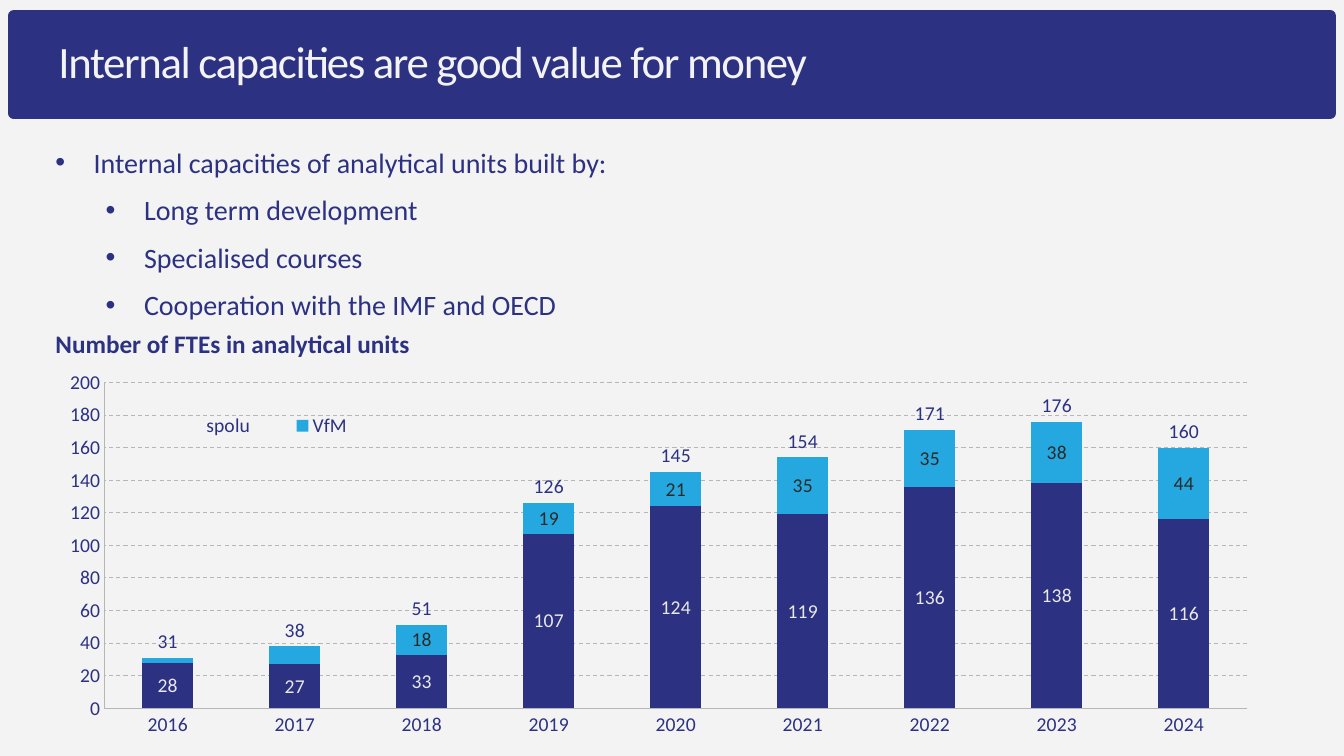
from dataclasses import dataclass

from lxml import etree
from pptx import Presentation
from pptx.chart.data import CategoryChartData
from pptx.dml.color import RGBColor
from pptx.enum.chart import XL_CHART_TYPE, XL_LABEL_POSITION, XL_LEGEND_POSITION, XL_TICK_MARK
from pptx.enum.dml import MSO_LINE
from pptx.enum.shapes import MSO_SHAPE
from pptx.enum.text import MSO_ANCHOR
from pptx.oxml import parse_xml
from pptx.oxml.ns import nsdecls, qn
from pptx.util import Inches, Pt

NAVY = RGBColor(0x2C, 0x31, 0x82)
SKY = RGBColor(0x25, 0xA8, 0xE0)
PALE = RGBColor(0xF3, 0xF3, 0xF3)
LIGHT = RGBColor(0xE9, 0xE9, 0xE9)
DARK = RGBColor(0x2A, 0x2A, 0x2A)
GREY = RGBColor(0xB6, 0xB6, 0xB6)
FONT = "Calibri"
NO_GRID = "{2D5ABB26-0587-4C30-8999-92F81FD0307C}"


@dataclass
class Bullet:
    text: str
    level: int = 0


@dataclass
class Series:
    name: str
    values: list[int]
    ink: RGBColor
    fill: RGBColor | None = None
    place: XL_LABEL_POSITION | None = None
    bare: tuple[int, ...] = ()


BULLETS = [
    Bullet("Internal capacities of analytical units built by:"),
    Bullet("Long term development", 1),
    Bullet("Specialised courses", 1),
    Bullet("Cooperation with the IMF and OECD", 1),
]
YEARS = [str(year) for year in range(2016, 2025)]
CORE = [28, 27, 33, 107, 124, 119, 136, 138, 116]
VFM = [3, 11, 18, 19, 21, 35, 35, 38, 44]
TOTAL = [31, 38, 51, 126, 145, 154, 171, 176, 160]
SERIES = [
    Series("Series 1", CORE, LIGHT, NAVY),
    Series("VfM", VFM, DARK, SKY, bare=(0, 1)),
    Series("spolu", TOTAL, NAVY, place=XL_LABEL_POSITION.INSIDE_BASE),
]


def style(font, size: float, color: RGBColor = NAVY, bold: bool = False) -> None:
    font.name, font.size, font.bold = FONT, Pt(size), bold
    font.color.rgb = color


def write(para, text: str, *, size: float, color: RGBColor = NAVY,
          bold: bool = False, track: float = 0) -> None:
    run = para.add_run()
    run.text = text
    style(run.font, size, color, bold)
    if track:
        run._r.get_or_add_rPr().set("spc", str(int(track * 100)))


def add_box(slide, left: float, top: float, width: float, height: float):
    box = slide.shapes.add_textbox(Inches(left), Inches(top), Inches(width), Inches(height))
    box.text_frame.word_wrap = True
    return box.text_frame


def add_title(slide) -> None:
    band = slide.shapes.add_shape(MSO_SHAPE.ROUNDED_RECTANGLE, Inches(0.08), Inches(0.1),
                                  Inches(13.17), Inches(1.08))
    band.adjustments[0] = 0.05
    band.shadow.inherit = False
    band.fill.solid()
    band.fill.fore_color.rgb = NAVY
    band.line.fill.background()
    frame = add_box(slide, 0.38, 0.11, 11.87, 1.06)
    frame.vertical_anchor = MSO_ANCHOR.MIDDLE
    frame.margin_left, frame.margin_right = Inches(0.2), Inches(0.05)
    para = frame.paragraphs[0]
    para.line_spacing = 0.9
    write(para, "Internal capacities are good value for money", size=32, color=PALE, track=-1)


def add_list(slide) -> None:
    frame = add_box(slide, 0.45, 1.39, 12.29, 2.62)
    for i, item in enumerate(BULLETS):
        para = frame.add_paragraph() if i else frame.paragraphs[0]
        para.level = item.level
        props = para._p.get_or_add_pPr()
        props.set("marL", str(Inches(0.38 + 0.5 * item.level)))
        props.set("indent", str(Inches(-0.38)))
        etree.SubElement(props, qn("a:buFont")).set("typeface", "Arial")
        etree.SubElement(props, qn("a:buChar")).set("char", "•")
        if i:
            para.space_before = Pt(10)
        write(para, item.text, size=20)


def add_frame(slide) -> None:
    """Table that heads the chart."""
    shape = slide.shapes.add_table(2, 1, Inches(0.45), Inches(3.22), Inches(12.44), Inches(3.82))
    for node in shape.element.iter(qn("a:tableStyleId")):
        node.text = NO_GRID
    table = shape.table
    table.first_row = table.horz_banding = False
    for row, height in zip(table.rows, (0.44, 3.38)):
        row.height = Inches(height)
        row.cells[0].fill.background()
    head = table.cell(0, 0).text_frame.paragraphs[0]
    write(head, "Number of FTEs in analytical units", size=18, bold=True)


def layout(x: float, y: float, width: float, height: float, inner: bool = False):
    """Manual layout in shares of the chart's size."""
    target = '<c:layoutTarget val="inner"/>' if inner else ""
    sizes = zip("xywh", (x, y, width, height))
    parts = "".join(f'<c:{key} val="{share}"/>' for key, share in sizes)
    return parse_xml(f'<c:layout {nsdecls("c")}><c:manualLayout>{target}'
                     '<c:xMode val="edge"/><c:yMode val="edge"/>'
                     f'{parts}</c:manualLayout></c:layout>')


def set_axis(axis) -> None:
    axis.major_tick_mark = axis.minor_tick_mark = XL_TICK_MARK.NONE
    style(axis.tick_labels.font, 14)
    axis.format.line.color.rgb = GREY
    axis.format.line.width = Pt(0.75)


def set_series(series, item: Series) -> None:
    fill = series.format.fill
    if item.fill is None:
        fill.background()
    else:
        fill.solid()
        fill.fore_color.rgb = item.fill
    series.invert_if_negative = False
    labels = series.data_labels
    labels.show_value = True
    style(labels.font, 14, item.ink)
    if item.place is not None:
        labels.position = item.place
    for i, point in enumerate(item.bare):
        labels._element.insert(i, parse_xml(
            f'<c:dLbl {nsdecls("c")}><c:idx val="{point}"/><c:delete val="1"/></c:dLbl>'))


def place_parts(chart) -> None:
    """Fix the plot and legend places, hide one entry and fill the chart."""
    space = chart._chartSpace
    for old in space.xpath("./c:chart/c:plotArea/c:layout | ./c:chart/c:legend/c:layout"):
        old.getparent().remove(old)
    body = space.find(qn("c:chart"))
    body.find(qn("c:plotArea")).insert(0, layout(0.053, 0.05, 0.918, 0.829, inner=True))
    cover = body.find(qn("c:legend")).find(qn("c:overlay"))
    cover.addprevious(parse_xml(
        f'<c:legendEntry {nsdecls("c")}><c:idx val="0"/><c:delete val="1"/></c:legendEntry>'))
    cover.addprevious(layout(0.09, 0.11, 0.19, 0.1))
    body.addnext(parse_xml(
        f'<c:spPr {nsdecls("c", "a")}><a:solidFill><a:srgbClr val="{PALE}"/></a:solidFill>'
        '<a:ln><a:noFill/></a:ln></c:spPr>'))


def add_graph(slide) -> None:
    data = CategoryChartData()
    data.categories = YEARS
    for item in SERIES:
        data.add_series(item.name, item.values)
    chart = slide.shapes.add_chart(XL_CHART_TYPE.COLUMN_STACKED, Inches(0.38), Inches(3.6),
                                   Inches(12.35), Inches(3.9), data).chart
    style(chart.font, 14)
    chart.has_title = False
    plot = chart.plots[0]
    plot.gap_width, plot.overlap, plot.vary_by_categories = 150, 100, False
    for series, item in zip(plot.series, SERIES):
        set_series(series, item)
    scale = chart.value_axis
    set_axis(chart.category_axis)
    set_axis(scale)
    scale.minimum_scale, scale.maximum_scale, scale.major_unit = 0, 200, 20
    line = scale.major_gridlines.format.line
    line.color.rgb, line.width, line.dash_style = GREY, Pt(0.75), MSO_LINE.DASH
    chart.has_legend = True
    chart.legend.position = XL_LEGEND_POSITION.RIGHT
    chart.legend.include_in_layout = False
    style(chart.legend.font, 14)
    place_parts(chart)


def main() -> None:
    deck = Presentation()
    deck.slide_width, deck.slide_height = Inches(13.33), Inches(7.5)
    slide = deck.slides.add_slide(deck.slide_layouts[6])
    slide.background.fill.solid()
    slide.background.fill.fore_color.rgb = PALE
    add_title(slide)
    add_list(slide)
    add_frame(slide)
    add_graph(slide)
    deck.save("out.pptx")


if __name__ == "__main__":
    main()
